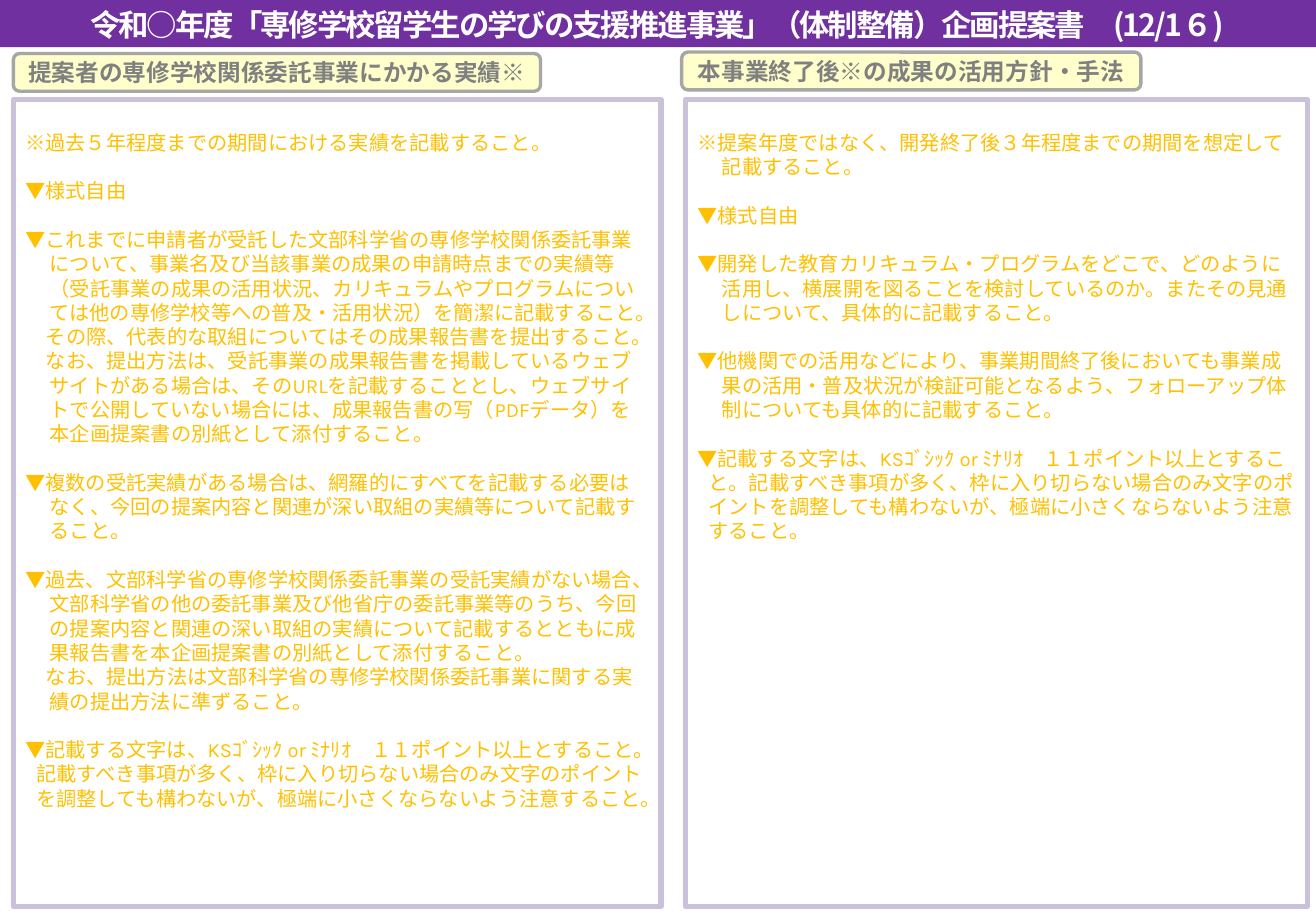
from dataclasses import dataclass

import pptx
import pptx.dml.color
import pptx.enum.shapes
import pptx.enum.text
import pptx.oxml.ns
import pptx.util
from lxml import etree

Cm = pptx.util.Cm
Pt = pptx.util.Pt
ANCHOR = pptx.enum.text.MSO_ANCHOR
ALIGN = pptx.enum.text.PP_ALIGN
SHAPE = pptx.enum.shapes.MSO_SHAPE

COLORS = {
    "band": "7030A0",
    "title": "FFFFFF",
    "label_fill": "FFFFCC",
    "label_line": "A6A6A6",
    "label_text": "808080",
    "panel_line": "CCC1DA",
    "guide": "FFC000",
}
BODY_FONT = "Karla"
HEAD_FONT = "Noto Sans CJK JP"
LINE_PITCH = 14.4
WIDTH, HEIGHT = 27.51, 19.05


@dataclass
class Para:
    text: str
    left: float = 0.51
    first: float = -0.51
    gap: bool = True


@dataclass
class Box:
    left: float
    top: float
    width: float
    height: float


@dataclass
class Section:
    label: str
    label_box: Box
    panel_box: Box
    paras: list[Para]


FONT_RULE = Para(
    "▼記載する文字は、KSｺﾞｼｯｸ or ﾐﾅﾘｵ　１１ポイント以上とすること。記載すべき事項が多く、"
    "枠に入り切らない場合のみ文字のポイントを調整しても構わないが、極端に小さくならないよう注意すること。",
    left=0.23, first=-0.23)
FREE_FORM = Para("▼様式自由", left=0, first=0)

SECTIONS = [
    Section(
        "提案者の専修学校関係委託事業にかかる実績※",
        Box(0.28, 1.12, 11.02, 0.79),
        Box(0.28, 2.08, 13.54, 16.87),
        [
            Para("※過去５年程度までの期間における実績を記載すること。", left=0, first=0),
            FREE_FORM,
            Para("▼これまでに申請者が受託した文部科学省の専修学校関係委託事業について、"
                 "事業名及び当該事業の成果の申請時点までの実績等（受託事業の成果の活用状況、"
                 "カリキュラムやプログラムについては他の専修学校等への普及・活用状況）を"
                 "簡潔に記載すること。"),
            Para("その際、代表的な取組についてはその成果報告書を提出すること。",
                 first=-0.08, gap=False),
            Para("なお、提出方法は、受託事業の成果報告書を掲載しているウェブサイトがある場合は、"
                 "そのURLを記載することとし、ウェブサイトで公開していない場合には、"
                 "成果報告書の写（PDFデータ）を本企画提案書の別紙として添付すること。",
                 first=-0.08, gap=False),
            Para("▼複数の受託実績がある場合は、網羅的にすべてを記載する必要はなく、"
                 "今回の提案内容と関連が深い取組の実績等について記載すること。"),
            Para("▼過去、文部科学省の専修学校関係委託事業の受託実績がない場合、"
                 "文部科学省の他の委託事業及び他省庁の委託事業等のうち、"
                 "今回の提案内容と関連の深い取組の実績について記載するとともに"
                 "成果報告書を本企画提案書の別紙として添付すること。"),
            Para("なお、提出方法は文部科学省の専修学校関係委託事業に関する実績の"
                 "提出方法に準ずること。", first=-0.08, gap=False),
            FONT_RULE,
        ]),
    Section(
        "本事業終了後※の成果の活用方針・手法",
        Box(14.25, 1.09, 9.6, 0.79),
        Box(14.33, 2.08, 13.0, 16.87),
        [
            Para("※提案年度ではなく、開発終了後３年程度までの期間を想定して記載すること。"),
            FREE_FORM,
            Para("▼開発した教育カリキュラム・プログラムをどこで、どのように活用し、"
                 "横展開を図ることを検討しているのか。またその見通しについて、"
                 "具体的に記載すること。"),
            Para("▼他機関での活用などにより、事業期間終了後においても"
                 "事業成果の活用・普及状況が検証可能となるよう、"
                 "フォローアップ体制についても具体的に記載すること。"),
            FONT_RULE,
        ]),
]


def rgb(name: str) -> pptx.dml.color.RGBColor:
    return pptx.dml.color.RGBColor.from_string(COLORS[name])


def write(p, text: str, *, size: float, color: str, font: str,
          bold: bool = False, spacing: float = 0, align=ALIGN.LEFT) -> None:
    p.alignment = align
    r = p.add_run()
    r.text = text
    r.font.size = Pt(size)
    r.font.bold = bold
    r.font.color.rgb = rgb(color)
    r.font.name = font
    props = r._r.get_or_add_rPr()
    etree.SubElement(props, pptx.oxml.ns.qn("a:ea")).set("typeface", font)
    if spacing:
        props.set("spc", str(round(spacing * 100)))


def add_box(s, kind, box: Box, *, fill: str = "", line: str = "", width: float = 0):
    sp = s.shapes.add_shape(kind, Cm(box.left), Cm(box.top), Cm(box.width), Cm(box.height))
    sp.shadow.inherit = False
    if fill:
        sp.fill.solid()
        sp.fill.fore_color.rgb = rgb(fill)
    else:
        sp.fill.background()
    if line:
        sp.line.color.rgb = rgb(line)
        sp.line.width = Pt(width)
    else:
        sp.line.fill.background()
    return sp


def write_heading(sp, text: str, *, size: float, color: str, spacing: float = 0) -> None:
    tf = sp.text_frame
    tf.word_wrap = False
    tf.auto_size = pptx.enum.text.MSO_AUTO_SIZE.NONE
    tf.vertical_anchor = ANCHOR.MIDDLE
    tf.margin_top = tf.margin_bottom = 0
    write(tf.paragraphs[0], text, size=size, color=color, font=HEAD_FONT,
          bold=True, spacing=spacing, align=ALIGN.CENTER)


def add_panel(s, section: Section) -> None:
    sp = add_box(s, SHAPE.RECTANGLE, section.panel_box, line="panel_line", width=3)
    tf = sp.text_frame
    tf.word_wrap = True
    tf.vertical_anchor = ANCHOR.TOP
    tf.margin_top = Cm(0.64)
    for i, para in enumerate(section.paras):
        p = tf.add_paragraph() if i else tf.paragraphs[0]
        p.line_spacing = Pt(LINE_PITCH)
        p.space_before = Pt(LINE_PITCH if i and para.gap else 0)
        props = p._p.get_or_add_pPr()
        props.set("marL", str(Cm(para.left)))
        props.set("indent", str(Cm(para.first)))
        write(p, para.text, size=12, color="guide", font=BODY_FONT)


def add_label(s, section: Section) -> None:
    sp = add_box(s, SHAPE.ROUNDED_RECTANGLE, section.label_box,
                 fill="label_fill", line="label_line", width=2)
    write_heading(sp, section.label, size=14, color="label_text")


def add_title(s) -> None:
    band = add_box(s, SHAPE.RECTANGLE, Box(0, 0, WIDTH, 0.99), fill="band")
    title = s.shapes.title
    title.left, title.top, title.width, title.height = Cm(1.09), Cm(0), Cm(25.3), Cm(1.02)
    write_heading(
        title,
        "令和○年度「専修学校留学生の学びの支援推進事業」（体制整備）企画提案書　(12/1６)",
        size=18, color="title", spacing=-1.2)
    band.element.addnext(title.element)


def main() -> None:
    prs = pptx.Presentation()
    prs.slide_width, prs.slide_height = Cm(WIDTH), Cm(HEIGHT)
    s = prs.slides.add_slide(prs.slide_layouts.get_by_name("Title Only"))
    for section in SECTIONS:
        add_panel(s, section)
        add_label(s, section)
    add_title(s)
    prs.save("out.pptx")


if __name__ == "__main__":
    main()
